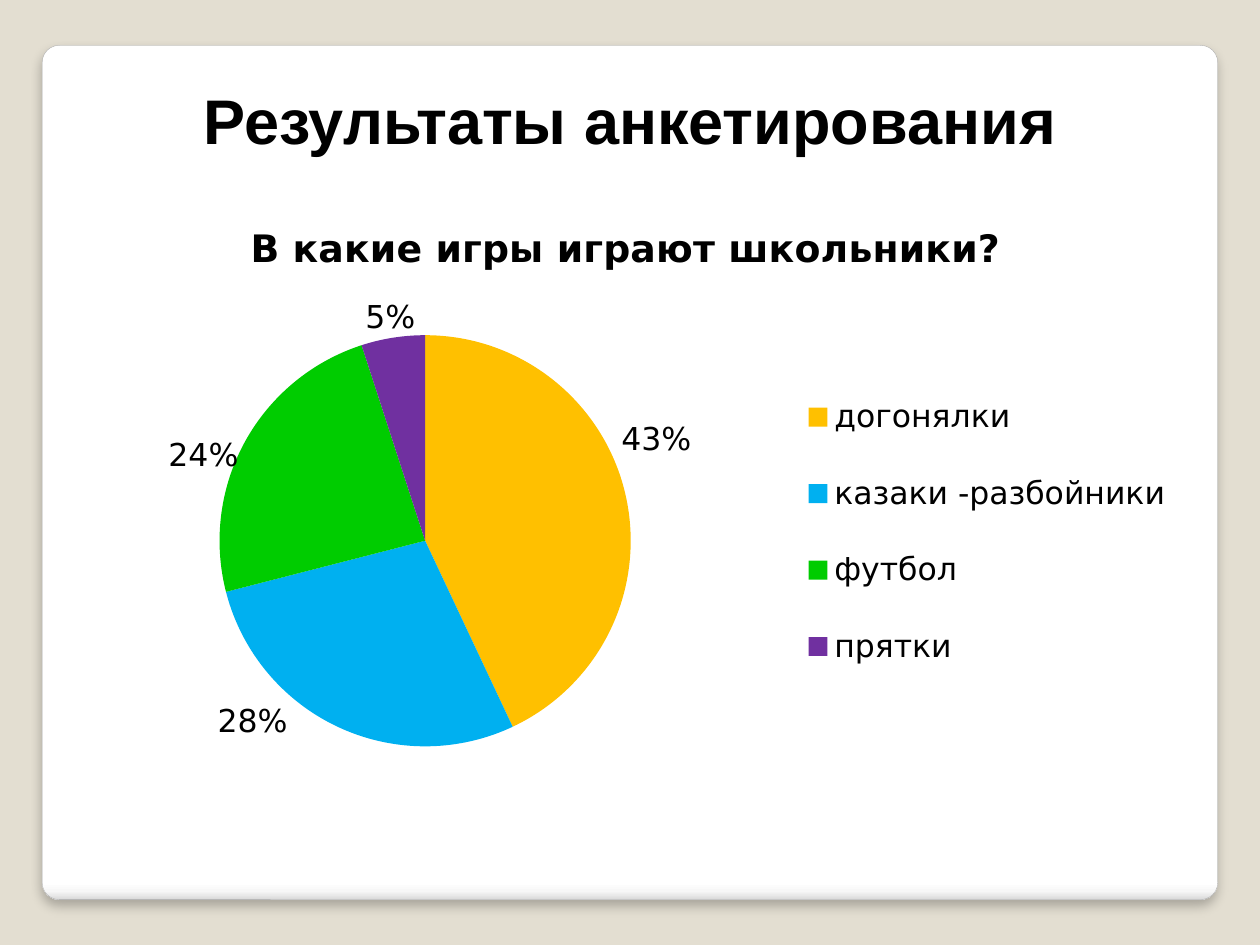
from dataclasses import dataclass

from lxml.etree import SubElement
from pptx import Presentation
from pptx.chart.data import CategoryChartData
from pptx.dml.color import RGBColor
from pptx.enum.chart import XL_CHART_TYPE as ChartType
from pptx.enum.chart import XL_LABEL_POSITION as LabelPosition
from pptx.enum.chart import XL_LEGEND_POSITION as LegendPosition
from pptx.enum.shapes import MSO_SHAPE as Preset
from pptx.enum.text import MSO_AUTO_SIZE as AutoSize
from pptx.enum.text import MSO_ANCHOR as Anchor
from pptx.enum.text import PP_ALIGN as Align
from pptx.oxml import parse_xml
from pptx.oxml.ns import nsdecls, qn
from pptx.util import Inches, Pt

TITLE = "Результаты анкетирования"
QUESTION = "В какие игры играют школьники?"
GAMES = [
    ("догонялки", 43, "FFC000", {"x": -0.01, "y": -0.06}),
    ("казаки -разбойники", 28, "00B0F0", {"x": -0.04, "y": -0.05}),
    ("футбол", 24, "00CC00", {"x": 0, "y": 0.06}),
    ("прятки", 5, "7030A0", {"x": 0.02, "y": 0.01}),
]
PANEL_STOPS = [(0, "FFFFFF"), (98, "FFFFFF"), (99, "F7F7F7"), (100, "DADADA")]


@dataclass(frozen=True)
class Theme:
    backdrop: str = "E3DED1"
    edge: str = "A4A4A4"
    ink: str = "000000"
    title_font: str = "Arial"
    chart_font: str = "DejaVu Sans"
    title_size: float = 36
    question_size: float = 21.6
    label_size: float = 18


THEME = Theme()
WIDTH, HEIGHT = 10, 7.5
PANEL_TOP, PANEL_HEIGHT, PANEL_WIDTH = 0.36, 6.78, 9.33
CHART_TOP, CHART_HEIGHT, CHART_WIDTH = 1.62, 4.73, 9.29
TITLE_TOP, TITLE_HEIGHT, TITLE_WIDTH = 0.6, 0.71, 7.03
QUESTION_AREA = {"x": 0.17, "y": 0.02}
PIE_AREA = {"x": 0.02, "y": 0.22, "w": 0.61, "h": 0.69}
LEGEND_AREA = {"x": 0.63, "y": 0.26, "w": 0.35, "h": 0.58}


def centred(top, width, height):
    return [Inches(side) for side in ((WIDTH - width) / 2, top, width, height)]


def set_font(font, name, size, bold=False):
    font.name, font.size, font.bold = name, Pt(size), bold
    font.color.rgb = RGBColor.from_string(THEME.ink)


def place(element, area, before, inner=False, mode="edge"):
    for old in element.findall(qn("c:layout")):
        element.remove(old)
    layout = parse_xml(f"<c:layout {nsdecls('c')}/>")
    manual = SubElement(layout, qn("c:manualLayout"))
    settings = [("layoutTarget", "inner")] if inner else []
    settings += [(f"{side}Mode", mode) for side in ("x", "y")]
    settings += list(area.items())
    for tag, value in settings:
        SubElement(manual, qn(f"c:{tag}")).set("val", str(value))
    before(layout)


def add_panel(page):
    panel = page.shapes.add_shape(
        Preset.ROUNDED_RECTANGLE, *centred(PANEL_TOP, PANEL_WIDTH, PANEL_HEIGHT))
    panel.adjustments[0] = 0.02
    panel.line.color.rgb = RGBColor.from_string(THEME.edge)
    panel.line.width = Pt(0.16)
    panel.fill.gradient()
    panel.fill.gradient_angle = 270
    stops = panel.fill._fill._gradFill.find(qn("a:gsLst"))
    for stop in list(stops):
        stops.remove(stop)
    for share, colour in PANEL_STOPS:
        stop = SubElement(stops, qn("a:gs"), pos=str(share * 1000))
        SubElement(stop, qn("a:srgbClr"), val=colour)
    panel.shadow.inherit = False
    effects = panel._element.spPr.find(qn("a:effectLst"))
    shadow = SubElement(effects, qn("a:outerShdw"), blurRad=str(Pt(6)),
                        dist=str(Pt(4)), dir="5400000", algn="t", rotWithShape="0")
    colour = SubElement(shadow, qn("a:srgbClr"), val=THEME.ink)
    SubElement(colour, qn("a:alpha"), val="25000")


def style_slices(series):
    labels = series.data_labels
    labels.show_percentage, labels.show_value = True, False
    labels.number_format, labels.number_format_is_linked = "0%", False
    labels.position = LabelPosition.OUTSIDE_END
    set_font(labels.font, THEME.chart_font, THEME.label_size)
    for leader in series._element.iter(qn("c:showLeaderLines")):
        leader.set("val", "0")
    for index, (_, _, colour, _) in enumerate(GAMES):
        point = series.points[index]
        point.format.fill.solid()
        point.format.fill.fore_color.rgb = RGBColor.from_string(colour)
        set_font(point.data_label.font, THEME.chart_font, THEME.label_size)
        point.data_label.position = LabelPosition.OUTSIDE_END
    for label, (_, _, _, shift) in zip(list(series._element.iter(qn("c:dLbl"))), GAMES):
        label.find(qn("c:showVal")).set("val", "0")
        label.find(qn("c:showPercent")).set("val", "1")
        place(label, shift, label.find(qn("c:idx")).addnext, mode="factor")


def add_pie(page):
    data = CategoryChartData()
    data.categories = [game[0] for game in GAMES]
    data.add_series("Series 1", [game[1] for game in GAMES])
    chart = page.shapes.add_chart(
        ChartType.PIE, *centred(CHART_TOP, CHART_WIDTH, CHART_HEIGHT), data).chart
    set_font(chart.font, THEME.chart_font, THEME.label_size)

    chart.has_title = True
    heading = chart.chart_title.text_frame
    heading.text = QUESTION
    set_font(heading.paragraphs[0].runs[0].font, THEME.chart_font, THEME.question_size, True)
    title = chart.chart_title._element
    place(title, QUESTION_AREA, title.find(qn("c:tx")).addnext)

    plot = chart.plots[0]
    plot.vary_by_categories = True
    style_slices(plot.series[0])
    area = plot._element.getparent()
    place(area, PIE_AREA, lambda layout: area.insert(0, layout), inner=True)

    chart.has_legend = True
    chart.legend.position = LegendPosition.RIGHT
    chart.legend.include_in_layout = False
    set_font(chart.legend.font, THEME.chart_font, THEME.label_size)
    legend = chart.legend._element
    place(legend, LEGEND_AREA, legend.find(qn("c:legendPos")).addnext)


def set_title(page):
    title = page.shapes.title
    title.left, title.top, title.width, title.height = centred(
        TITLE_TOP, TITLE_WIDTH, TITLE_HEIGHT)
    frame = title.text_frame
    frame.text = TITLE
    frame.word_wrap = False
    frame.auto_size = AutoSize.SHAPE_TO_FIT_TEXT
    frame.vertical_anchor = Anchor.TOP
    para = frame.paragraphs[0]
    para.alignment = Align.CENTER
    set_font(para.runs[0].font, THEME.title_font, THEME.title_size, True)
    page.shapes._spTree.append(title._element)


def main():
    deck = Presentation()
    deck.slide_width, deck.slide_height = Inches(WIDTH), Inches(HEIGHT)
    page = deck.slides.add_slide(deck.slide_layouts[5])
    page.background.fill.solid()
    page.background.fill.fore_color.rgb = RGBColor.from_string(THEME.backdrop)
    add_panel(page)
    add_pie(page)
    set_title(page)
    deck.save("out.pptx")


if __name__ == "__main__":
    main()
